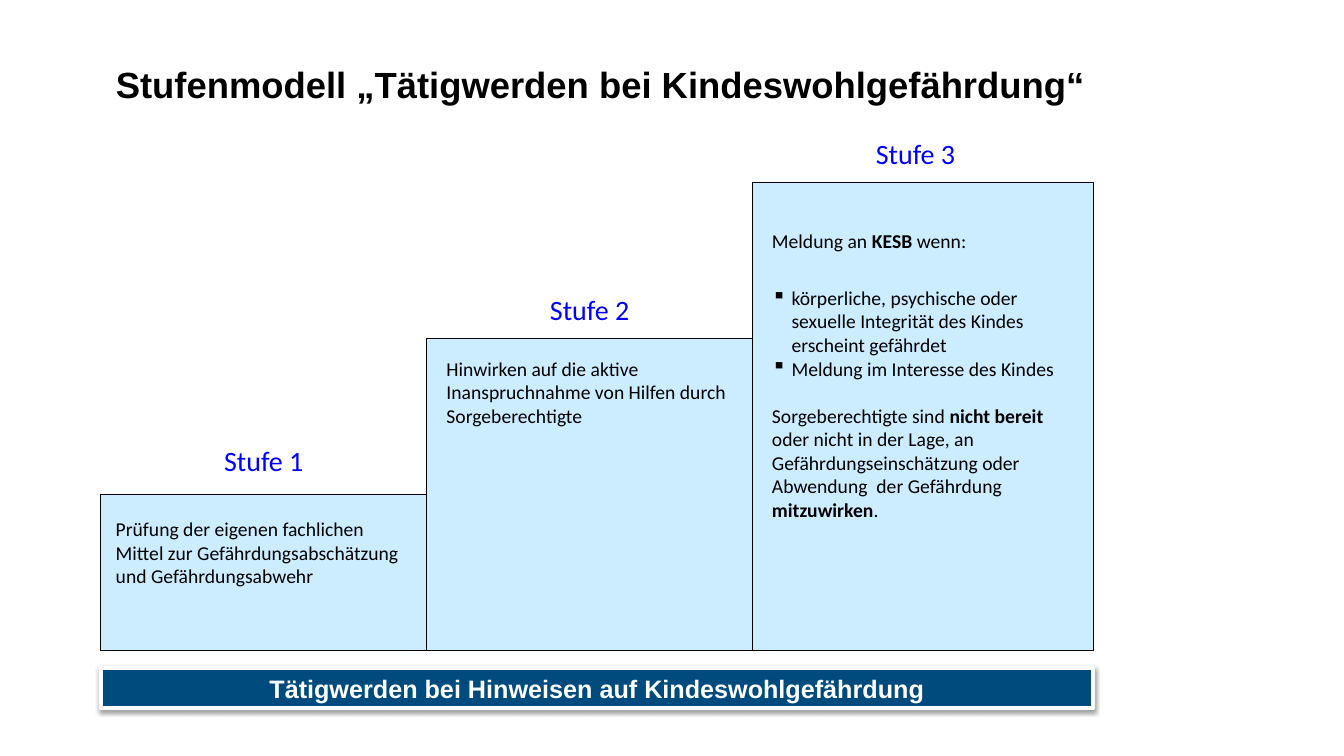
import pptx
import pptx.util
import pptx.dml.color
import pptx.enum.shapes
import pptx.enum.text
import pptx.oxml
from pptx.oxml.ns import nsdecls

Pt = pptx.util.Pt
RGBColor = pptx.dml.color.RGBColor
CENTER = pptx.enum.text.PP_ALIGN.CENTER
RECTANGLE = pptx.enum.shapes.MSO_SHAPE.RECTANGLE

BLACK = RGBColor(0x00, 0x00, 0x00)
WHITE = RGBColor(0xFF, 0xFF, 0xFF)
LABEL_BLUE = RGBColor(0x00, 0x00, 0xFF)
STEP_BLUE = RGBColor(0xCC, 0xEC, 0xFF)
BANNER_BLUE = RGBColor(0x00, 0x4B, 0x7D)

STEP_LEFT, STEP_WIDTH, STEP_RISE = 72, 232.8, 111.4
STEPS_RIGHT, STEPS_BOTTOM = 781, 464.4

presentation = pptx.Presentation()
presentation.slide_width = Pt(960)
presentation.slide_height = Pt(540)
slide = presentation.slides.add_slide(presentation.slide_layouts[6])


def add_rectangle(left, top, width, height, fill, line, line_width):
    shape = slide.shapes.add_shape(RECTANGLE, Pt(left), Pt(top), Pt(width), Pt(height))
    shape.fill.solid()
    shape.fill.fore_color.rgb = fill
    shape.line.color.rgb = line
    shape.line.width = Pt(line_width)
    shape.shadow.inherit = False
    return shape


def add_text(left, top, width, height, paragraphs, size, color):
    """Add a text box; each paragraph is (runs, bulleted, space before), each run (text, bold)."""
    box = slide.shapes.add_textbox(Pt(left), Pt(top), Pt(width), Pt(height))
    frame = box.text_frame
    frame.word_wrap = True
    for index, (runs, bulleted, space_before) in enumerate(paragraphs):
        paragraph = frame.paragraphs[0] if index == 0 else frame.add_paragraph()
        if space_before:
            paragraph.space_before = Pt(space_before)
        if bulleted:
            properties = paragraph._p.get_or_add_pPr()
            properties.set("marL", str(Pt(14)))
            properties.set("indent", str(Pt(-14)))
            properties.append(pptx.oxml.parse_xml(f'<a:buChar {nsdecls("a")} char="▪"/>'))
        paragraph.font.name = "Calibri"
        paragraph.font.size = Pt(size)
        paragraph.font.color.rgb = color
        for text, bold in runs:
            run = paragraph.add_run()
            run.text = text
            if bold:
                run.font.bold = True
    return frame


title = add_text(82.8, 49, 765, 65.5,
                 [([("Stufenmodell „Tätigwerden bei Kindeswohlgefährdung“", False)], False, 0)],
                 26, BLACK)
title.margin_left = title.margin_top = title.margin_right = title.margin_bottom = 0
title.paragraphs[0].font.name = "Arial"
title.paragraphs[0].font.bold = True
title.paragraphs[0].line_spacing = 0.85

# Step text: left, top, width, height, paragraphs; preceded by the label's gap above the step
steps = [
    (40, 75.6, 365.8, 219, 86.4, [
        ([("Prüfung der eigenen fachlichen Mittel zur Gefährdungsabschätzung "
           "und Gefährdungsabwehr", False)], False, 0)]),
    (36, 311.8, 251.3, 229.7, 67, [
        ([("Hinwirken auf die aktive Inanspruchnahme von Hilfen durch "
           "Sorgeberechtigte", False)], False, 0)]),
    (36, 544.3, 159.8, 229.7, 219.6, [
        ([("Meldung an ", False), ("KESB", True), (" wenn:", False)], False, 0),
        ([("körperliche, psychische oder sexuelle Integrität des Kindes "
           "erscheint gefährdet", False)], True, 24),
        ([("Meldung im Interesse des Kindes", False)], True, 0),
        ([("Sorgeberechtigte sind ", False), ("nicht bereit ", True),
          ("oder nicht in der Lage, an Gefährdungseinschätzung oder "
           "Abwendung  der Gefährdung ", False),
          ("mitzuwirken", True), (".", False)], False, 17)]),
]

for number, (label_gap, text_left, text_top, text_width, text_height, paragraphs) in enumerate(steps, 1):
    left = STEP_LEFT + (number - 1) * STEP_WIDTH
    width = STEPS_RIGHT - left if number == len(steps) else STEP_WIDTH
    height = number * STEP_RISE
    top = STEPS_BOTTOM - height
    add_rectangle(left, top, width, height, STEP_BLUE, BLACK, 0.75)
    label = add_text(left, top - label_gap, STEP_WIDTH, 36,
                     [([(f"Stufe {number}", False)], False, 0)], 20, LABEL_BLUE)
    label.paragraphs[0].alignment = CENTER
    add_text(text_left, text_top, text_width, text_height, paragraphs, 14, BLACK)

banner = add_rectangle(STEP_LEFT, 476.9, STEPS_RIGHT - STEP_LEFT, 29, BANNER_BLUE, WHITE, 3)
banner._element.spPr.find(pptx.oxml.ns.qn("a:effectLst")).append(pptx.oxml.parse_xml(
    f'<a:outerShdw {nsdecls("a")} blurRad="{Pt(3.1)}" dist="{Pt(1.6)}" dir="5400000" rotWithShape="0">'
    '<a:srgbClr val="000000"><a:alpha val="38000"/></a:srgbClr></a:outerShdw>'))
banner.text_frame.word_wrap = True
banner_text = banner.text_frame.paragraphs[0]
banner_text.text = "Tätigwerden bei Hinweisen auf Kindeswohlgefährdung"
banner_text.alignment = CENTER
banner_text.font.name = "Arial"
banner_text.font.size = Pt(18)
banner_text.font.bold = True
banner_text.font.color.rgb = WHITE

presentation.save("out.pptx")
